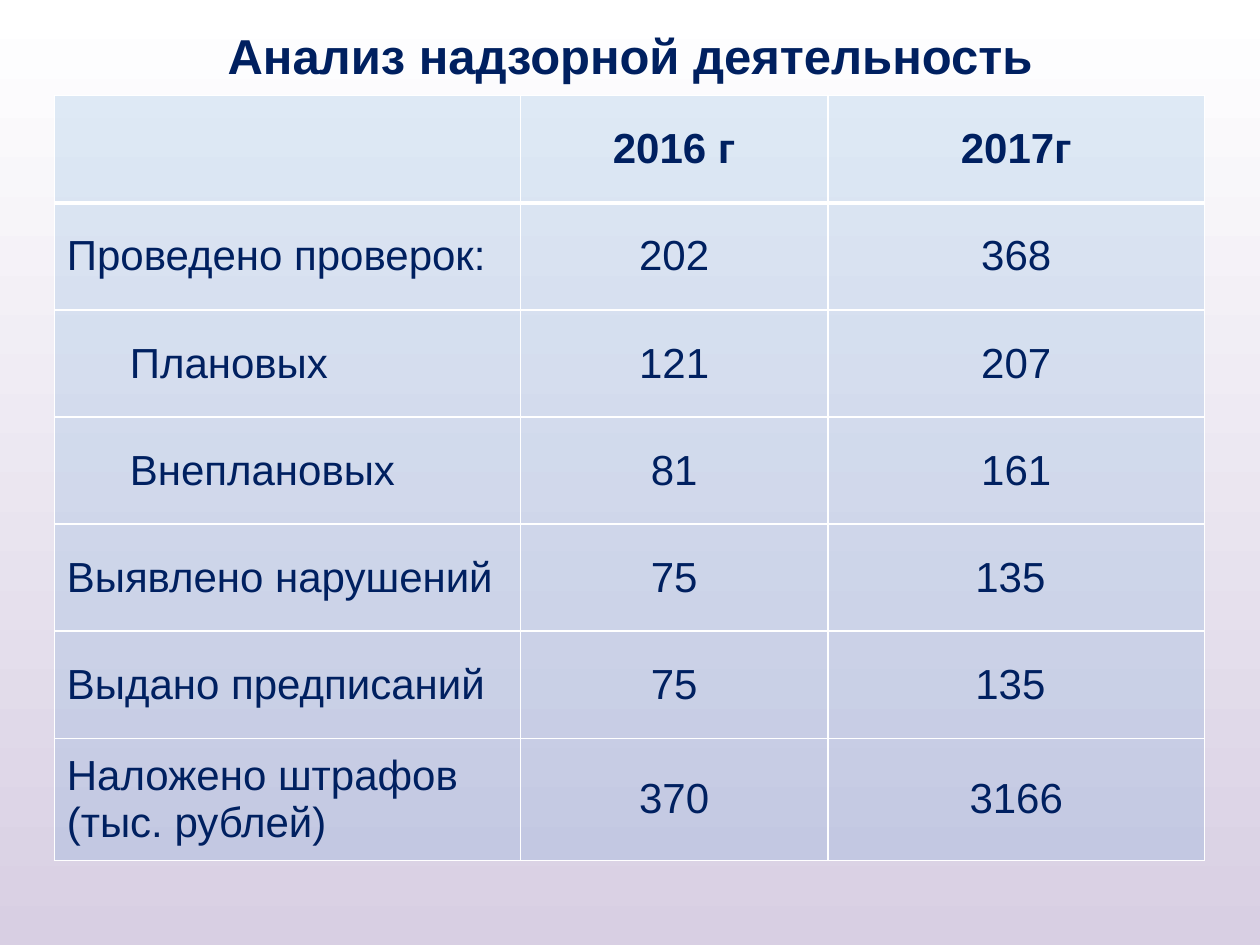
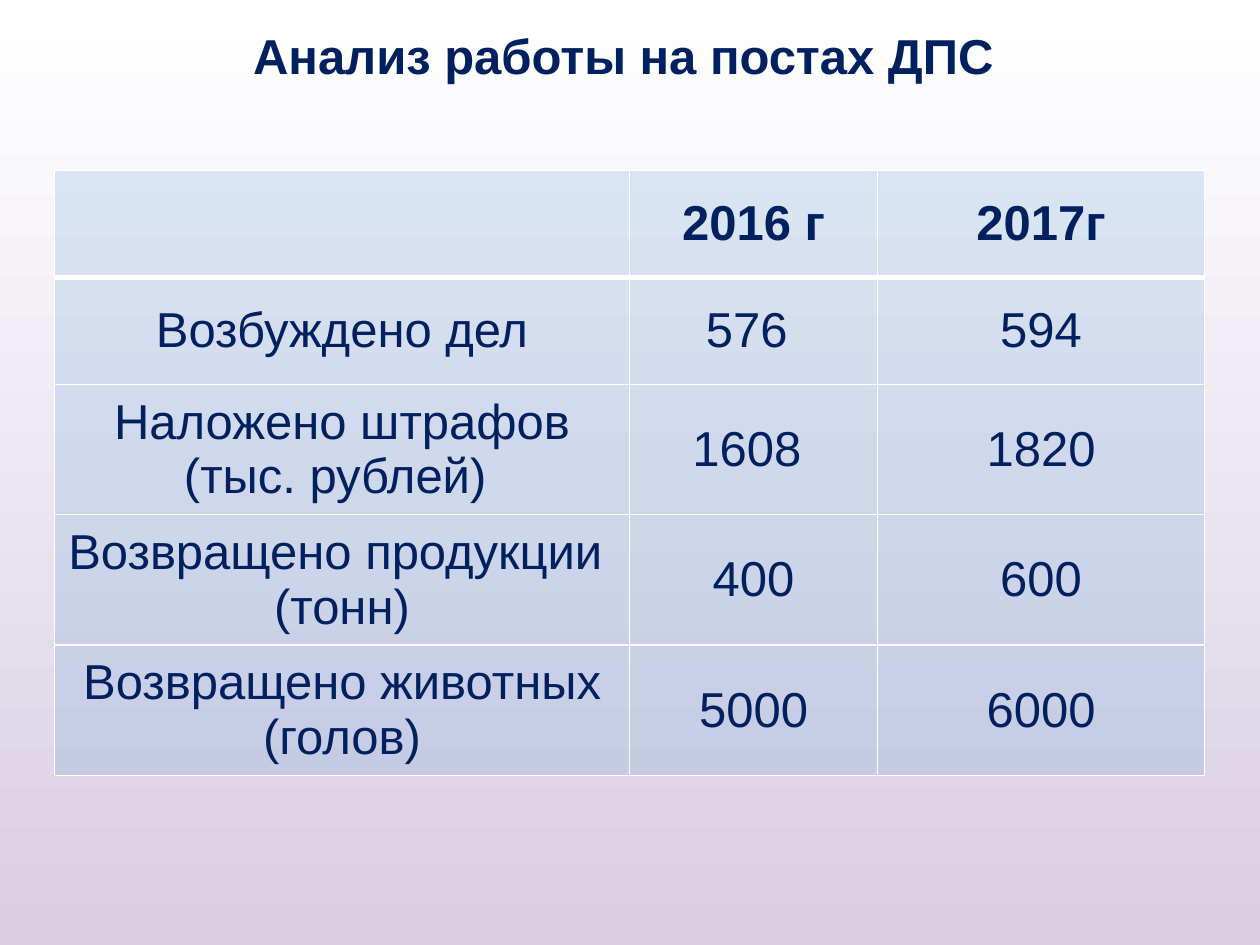
from lxml.etree import SubElement
from pptx import Presentation
from pptx.dml.color import RGBColor
from pptx.enum.shapes import MSO_SHAPE as Shape
from pptx.enum.text import MSO_ANCHOR as Anchor, PP_ALIGN as Align
from pptx.oxml import parse_xml
from pptx.oxml.ns import nsdecls, qn
from pptx.util import Pt

# Shared look
FONT = "Arial"
NAVY, WHITE, LILAC, SKY = "002060", "FFFFFF", "D8CFE3", "5B9BD5"
WIDTH, HEIGHT = 720, 540
TITLE_SIZE = 28
TABLE_LEFT, ROW_HEIGHT = 31, 61.2
THIN, THICK = 1, 3
INDENT = 36

# Content: each row is (label, 2016, 2017); a label may hold several paragraphs
YEARS = ("", "2016 г", "2017г")
INSPECTIONS = [
    YEARS,
    ("Проведено проверок:", "202", "368"),
    ("Плановых", "121", "207"),
    ("Внеплановых", "81", "161"),
    ("Выявлено нарушений", "75", "135 "),
    ("Выдано предписаний", "75", "135 "),
    ("Наложено штрафов (тыс. рублей)", "370", "3166"),
]
INDENTED = ("Плановых", "Внеплановых")
ROAD_POSTS = [
    YEARS,
    ("Возбуждено дел", "576 ", "594"),
    ("Наложено штрафов\n(тыс. рублей) ", "1608 ", "1820"),
    ("Возвращено продукции \n(тонн)", "400", "600"),
    ("Возвращено животных (голов)", "5000", "6000"),
]


def color(hex_string):
    return RGBColor.from_string(hex_string)


def add_run(paragraph, text, size, bold):
    run = paragraph.add_run()
    run.text = text
    run.font.name = FONT
    run.font.size = Pt(size)
    run.font.bold = bold
    run.font.color.rgb = color(NAVY)


def add_backdrop(slide):
    backdrop = slide.shapes.add_shape(Shape.RECTANGLE, 0, 0, Pt(WIDTH), Pt(HEIGHT))
    backdrop.shadow.inherit = False
    backdrop.line.fill.background()
    backdrop.fill.gradient()
    backdrop.fill.gradient_angle = 90
    for stop, shade, position in zip(backdrop.fill.gradient_stops, (LILAC, WHITE), (0, 1)):
        stop.color.rgb = color(shade)
        stop.position = position


def add_title(slide, text):
    frame = slide.shapes.add_textbox(Pt(20), Pt(3.6), Pt(680), Pt(60)).text_frame
    frame.word_wrap = True
    frame.vertical_anchor = Anchor.MIDDLE
    heading = frame.paragraphs[0]
    heading.alignment = Align.CENTER
    heading.line_spacing = 0.9
    add_run(heading, text, TITLE_SIZE, True)


def style_cell(cell, opacity, top, bottom):
    """Give a cell its translucent fill and its four white borders."""
    cell.vertical_anchor = Anchor.MIDDLE
    cell.fill.solid()
    cell.fill.fore_color.rgb = color(SKY)
    properties = cell._tc.get_or_add_tcPr()
    shade = properties.find(qn("a:solidFill"))[0]
    SubElement(shade, qn("a:alpha"), val=str(opacity * 1000))
    borders = (("L", THIN), ("R", THIN), ("T", top), ("B", bottom))
    for index, (side, width) in enumerate(borders):
        properties.insert(index, parse_xml(
            f'<a:ln{side} {nsdecls("a")} w="{Pt(width)}"><a:solidFill>'
            f'<a:srgbClr val="{WHITE}"/></a:solidFill></a:ln{side}>'))


def fill_cell(cell, text, size, bold, alignment):
    for index, line in enumerate(text.split("\n")):
        frame = cell.text_frame
        paragraph = frame.add_paragraph() if index else frame.paragraphs[0]
        paragraph.alignment = alignment
        if line in INDENTED:
            paragraph.level = 1
            paragraph._p.get_or_add_pPr().set("marL", str(Pt(INDENT)))
        if line:
            add_run(paragraph, line, size, bold)


def add_year_table(slide, rows, top, column_widths, size, opacity, label_alignment):
    table = slide.shapes.add_table(
        len(rows), len(YEARS), Pt(TABLE_LEFT), Pt(top),
        Pt(sum(column_widths)), Pt(ROW_HEIGHT * len(rows))).table
    table.first_row = table.horz_banding = False
    for column, width in zip(table.columns, column_widths):
        column.width = Pt(width)
    for r, values in enumerate(rows):
        table.rows[r].height = Pt(ROW_HEIGHT)
        for c, text in enumerate(values):
            cell = table.cell(r, c)
            style_cell(cell, opacity, THICK if r == 1 else THIN, THICK if r == 0 else THIN)
            fill_cell(cell, text, size, r == 0, Align.CENTER if c else label_alignment)
    return table


def main():
    deck = Presentation()
    deck.slide_width, deck.slide_height = Pt(WIDTH), Pt(HEIGHT)

    def new_slide(title):
        slide = deck.slides.add_slide(deck.slide_layouts[6])
        add_backdrop(slide)
        add_title(slide, title)
        return slide

    # Supervision results
    supervision = new_slide("Анализ надзорной деятельность")
    inspections = add_year_table(supervision, INSPECTIONS, 54.7, (266.4, 175.7, 215.3),
                                 24, 18, Align.LEFT)
    inspections.rows[len(INSPECTIONS) - 1].height = Pt(69.8)

    # Road post results
    posts = new_slide("Анализ работы на постах ДПС ")
    add_year_table(posts, ROAD_POSTS, 97.2, (328.8, 141.6, 187), 28, 19, Align.CENTER)

    deck.save("out.pptx")


if __name__ == "__main__":
    main()
